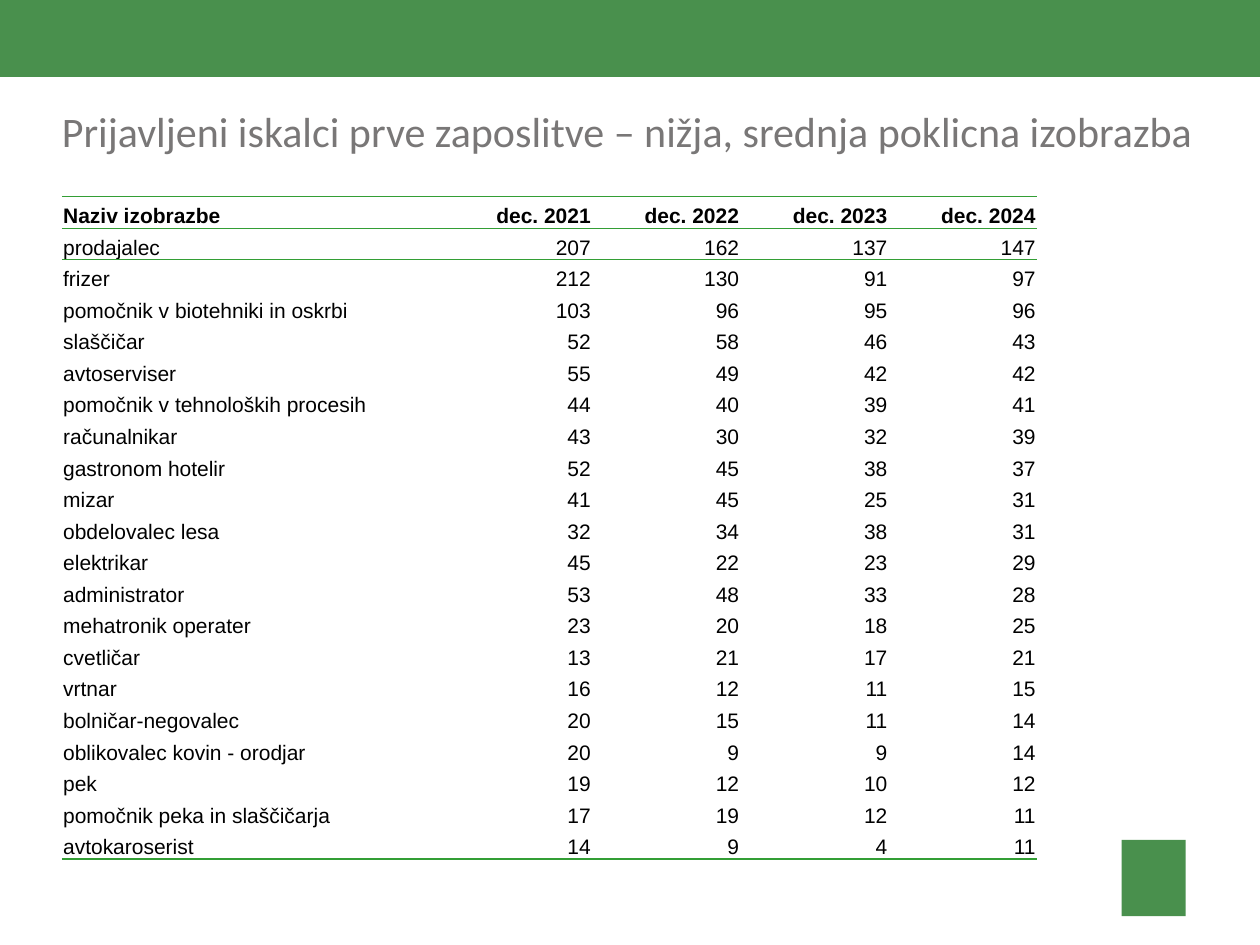
import lxml.etree
import pptx
import pptx.dml.color
import pptx.enum.shapes
import pptx.enum.text
import pptx.oxml.ns
import pptx.util

Pt = pptx.util.Pt
RGBColor = pptx.dml.color.RGBColor
ALIGN = pptx.enum.text.PP_ALIGN
ANCHOR = pptx.enum.text.MSO_ANCHOR
SHAPE = pptx.enum.shapes.MSO_SHAPE
qn = pptx.oxml.ns.qn

BRAND_GREEN = RGBColor(0x49, 0x90, 0x4D)
RULE_GREEN = RGBColor(0x33, 0x9E, 0x35)
TITLE_GREY = RGBColor(0x79, 0x77, 0x77)
BLACK = RGBColor(0, 0, 0)

PLAIN_TABLE_STYLE = "{2D5ABB26-0587-4C30-8999-92F81FD0307C}"
LEFT = 35.4
TABLE_TOP = 112.3
ROW_HEIGHT = 18.04
COLUMN_WIDTHS = [218.2] + [84.75] * 4
CELL_MARGIN = 0.72

TITLE = "Prijavljeni iskalci prve zaposlitve – nižja, srednja poklicna izobrazba"
HEADINGS = ("Naziv izobrazbe", "dec. 2021", "dec. 2022", "dec. 2023", "dec. 2024")
JOB_SEEKERS = [
    ("prodajalec", 207, 162, 137, 147),
    ("frizer", 212, 130, 91, 97),
    ("pomočnik v biotehniki in oskrbi", 103, 96, 95, 96),
    ("slaščičar", 52, 58, 46, 43),
    ("avtoserviser", 55, 49, 42, 42),
    ("pomočnik v tehnoloških procesih", 44, 40, 39, 41),
    ("računalnikar", 43, 30, 32, 39),
    ("gastronom hotelir", 52, 45, 38, 37),
    ("mizar", 41, 45, 25, 31),
    ("obdelovalec lesa", 32, 34, 38, 31),
    ("elektrikar", 45, 22, 23, 29),
    ("administrator", 53, 48, 33, 28),
    ("mehatronik operater", 23, 20, 18, 25),
    ("cvetličar", 13, 21, 17, 21),
    ("vrtnar", 16, 12, 11, 15),
    ("bolničar-negovalec", 20, 15, 11, 14),
    ("oblikovalec kovin - orodjar", 20, 9, 9, 14),
    ("pek", 19, 12, 10, 12),
    ("pomočnik peka in slaščičarja", 17, 19, 12, 11),
    ("avtokaroserist", 14, 9, 4, 11),
]


def write_text(frame, text, size=12, font="Arial", color=BLACK, bold=False,
               align=ALIGN.LEFT):
    paragraph = frame.paragraphs[0]
    paragraph.alignment = align
    run = paragraph.add_run()
    run.text = text
    run.font.size = Pt(size)
    run.font.name = font
    run.font.bold = bold
    run.font.color.rgb = color


def add_green_block(slide, left, top, width, height):
    block = slide.shapes.add_shape(SHAPE.RECTANGLE, Pt(left), Pt(top), Pt(width), Pt(height))
    block.shadow.inherit = False
    block.fill.solid()
    block.fill.fore_color.rgb = BRAND_GREEN
    block.line.fill.background()


def add_title(slide):
    title = slide.shapes.add_textbox(Pt(LEFT), Pt(60), Pt(666.7), Pt(51))
    frame = title.text_frame
    frame.word_wrap = True
    frame.vertical_anchor = ANCHOR.TOP
    frame.margin_left = frame.margin_right = frame.margin_top = frame.margin_bottom = 0
    write_text(frame, TITLE, size=24, font="Calibri", color=TITLE_GREY)


def add_rule(cell, side, width):
    """Draw a cell border; side is lnT or lnB, added in that order."""
    properties = cell._tc.get_or_add_tcPr()
    border = lxml.etree.SubElement(properties, qn("a:" + side), w=str(int(Pt(width))))
    fill = lxml.etree.SubElement(border, qn("a:solidFill"))
    lxml.etree.SubElement(fill, qn("a:srgbClr"), val=str(RULE_GREEN))


def rules_for_row(row, last_row):
    if row == 0:
        return [("lnT", 0.5), ("lnB", 0.5)]
    if row == 1:
        return [("lnT", 0.5)]
    if row == last_row:
        return [("lnB", 1)]
    return []


def fill_cell(cell, text, rules, bold, align):
    cell.margin_left = cell.margin_right = cell.margin_top = Pt(CELL_MARGIN)
    cell.margin_bottom = 0
    cell.vertical_anchor = ANCHOR.BOTTOM
    write_text(cell.text_frame, text, bold=bold, align=align)
    for side, width in rules:
        add_rule(cell, side, width)
    cell.fill.background()


def add_job_seekers_table(slide):
    records = [HEADINGS] + JOB_SEEKERS
    table_frame = slide.shapes.add_table(
        len(records), len(HEADINGS), Pt(LEFT), Pt(TABLE_TOP),
        Pt(sum(COLUMN_WIDTHS)), Pt(ROW_HEIGHT * len(records)))
    table = table_frame.table
    table.horz_banding = False
    table._tbl.tblPr.find(qn("a:tableStyleId")).text = PLAIN_TABLE_STYLE
    for column, width in zip(table.columns, COLUMN_WIDTHS):
        column.width = Pt(width)
    for row, record in enumerate(records):
        table.rows[row].height = Pt(ROW_HEIGHT)
        rules = rules_for_row(row, len(records) - 1)
        for column, value in enumerate(record):
            fill_cell(table.cell(row, column), str(value), rules, bold=row == 0,
                      align=ALIGN.RIGHT if column else ALIGN.LEFT)


def main():
    presentation = pptx.Presentation()
    presentation.slide_width = Pt(720)
    presentation.slide_height = Pt(540)
    slide = presentation.slides.add_slide(presentation.slide_layouts[6])
    add_green_block(slide, 0, -0.5, 720, 44.5)
    add_green_block(slide, 641, 480, 36.5, 43.5)
    add_title(slide)
    add_job_seekers_table(slide)
    presentation.save("out.pptx")


if __name__ == "__main__":
    main()
